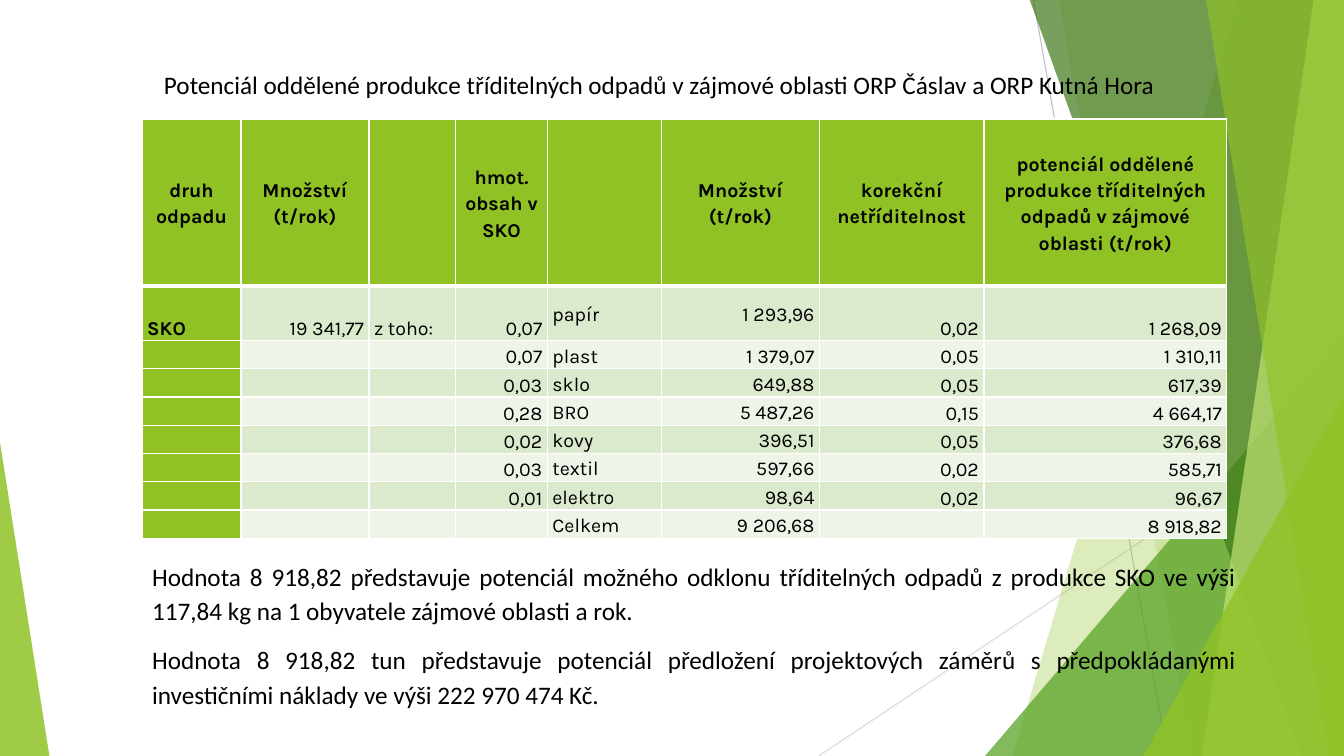
from lxml import etree
from pptx import Presentation
from pptx.dml.color import RGBColor
from pptx.enum.shapes import MSO_CONNECTOR, MSO_SHAPE
from pptx.enum.text import MSO_ANCHOR, MSO_AUTO_SIZE, PP_ALIGN
from pptx.oxml.ns import qn
from pptx.util import Pt

SCALE = 9144
LEFT, CENTER, RIGHT, JUSTIFY = PP_ALIGN.LEFT, PP_ALIGN.CENTER, PP_ALIGN.RIGHT, PP_ALIGN.JUSTIFY
MIDDLE, BOTTOM = MSO_ANCHOR.MIDDLE, MSO_ANCHOR.BOTTOM
TRIANGLE = MSO_SHAPE.ISOSCELES_TRIANGLE
STRAIGHT = MSO_CONNECTOR.STRAIGHT
GROW = MSO_AUTO_SIZE.SHAPE_TO_FIT_TEXT

WHITE = RGBColor(0xFF, 0xFF, 0xFF)
BLACK = RGBColor(0x00, 0x00, 0x00)
LIME = RGBColor(0x90, 0xC2, 0x26)
GREEN = RGBColor(0x54, 0xA0, 0x21)
DARK_GREEN = RGBColor(0x3F, 0x78, 0x19)
PALE_LIME = RGBColor(0xC0, 0xE4, 0x74)
ODD_BAND = RGBColor(0xDB, 0xE9, 0xCD)
EVEN_BAND = RGBColor(0xEE, 0xF4, 0xE8)
GREY = RGBColor(0xBF, 0xBF, 0xBF)
LIGHT_GREY = RGBColor(0xD9, 0xD9, 0xD9)

BODY_FONT = {"name": "Calibri", "size": Pt(18)}
CELL_FONT = {"name": "Karla", "size": Pt(14)}
SPACED = {"line_spacing": 1.15, "space_after": Pt(10)}
CELL_MARGINS = {"margin_left": 5 * SCALE, "margin_right": 5 * SCALE,
                "margin_top": 0, "margin_bottom": 0}

TITLE = "Potenciál oddělené produkce tříditelných odpadů v zájmové oblasti ORP Čáslav a ORP Kutná Hora"
CONCLUSIONS = [
    "Hodnota 8 918,82 představuje potenciál možného odklonu tříditelných odpadů z produkce SKO "
    "ve výši 117,84 kg na 1 obyvatele zájmové oblasti a rok.",
    "Hodnota 8 918,82 tun představuje potenciál předložení projektových záměrů s předpokládanými "
    "investičními náklady ve výši 222 970 474 Kč.",
]
COLUMN_WIDTHS = [98, 127, 86, 91, 113, 157, 163, 241]
ROW_HEIGHTS = [166, 54] + [28] * 7
COLUMN_ALIGNS = [LEFT, RIGHT, LEFT, RIGHT, LEFT, RIGHT, RIGHT, RIGHT]
COLUMN_ANCHORS = [BOTTOM] * 4 + [MIDDLE] * 2 + [BOTTOM] * 2
WASTE_ROWS = [
    ["druh odpadu", "Množství (t/rok)", "", "hmot. obsah v SKO", "", "Množství (t/rok)",
     "korekční netříditelnost",
     "potenciál oddělené produkce tříditelných odpadů v zájmové oblasti (t/rok)"],
    ["SKO", "19 341,77", "z toho:", "0,07", "papír", "1 293,96", "0,02", "1 268,09"],
    ["", "", "", "0,07", "plast", "1 379,07", "0,05", "1 310,11"],
    ["", "", "", "0,03", "sklo", "649,88", "0,05", "617,39"],
    ["", "", "", "0,28", "BRO", "5 487,26", "0,15", "4 664,17"],
    ["", "", "", "0,02", "kovy", "396,51", "0,05", "376,68"],
    ["", "", "", "0,03", "textil", "597,66", "0,02", "585,71"],
    ["", "", "", "0,01", "elektro", "98,64", "0,02", "96,67"],
    ["", "", "", "", "Celkem", "9 206,68", "", "8 918,82"],
]


def px(*lengths):
    return [round(length * SCALE) for length in lengths]


def apply(target, values):
    for key, value in values.items():
        setattr(target, key, value)


def write(paragraph, text, font, layout):
    apply(paragraph, layout)
    if text:
        run = paragraph.add_run()
        run.text = text
        apply(run.font, font)
        run.font.color.rgb = BLACK
    else:
        ending = etree.SubElement(paragraph._p, qn("a:endParaRPr"))
        ending.set("sz", str(round(font["size"].pt * 100)))


def paint(shape, color, opacity):
    shape.shadow.inherit = False
    shape.line.fill.background()
    shape.fill.solid()
    shape.fill.fore_color.rgb = color
    tint = shape._element.spPr.find(".//" + qn("a:srgbClr"))
    etree.SubElement(tint, qn("a:alpha")).set("val", str(opacity * 1000))


def add_ray(slide, start, end, color):
    ray = slide.shapes.add_connector(STRAIGHT, *px(*start, *end))
    ray.line.color.rgb = color
    ray.line.width = Pt(0.75)
    etree.SubElement(ray._element.spPr, qn("a:effectLst"))


def add_shard(slide, box, top_x, bottom_x, color, opacity):
    left, top, width, height = box
    right, bottom = left + width, top + height
    builder = slide.shapes.build_freeform(left + top_x, top, scale=SCALE)
    builder.add_line_segments([(right, top), (right, bottom), (left + bottom_x, bottom)], close=True)
    paint(builder.convert_to_shape(), color, opacity)


def add_triangle(slide, box, apex, color, opacity):
    triangle = slide.shapes.add_shape(TRIANGLE, *px(*box))
    triangle.adjustments[0] = apex
    paint(triangle, color, opacity)


def add_facets(slide, box):
    left, top, width, height = box
    right, bottom = left + width, top + height
    add_ray(slide, (left + 1025, top), (left + 1158, bottom), GREY)
    add_ray(slide, (right, top + 403), (left + 812, bottom), LIGHT_GREY)

    def shard(top_x, bottom_x, color, opacity):
        add_shard(slide, (left, top - 1, width, height + 1), top_x, bottom_x, color, opacity)

    def corner(corner_width, corner_height, color, opacity):
        corner_box = (right - corner_width, bottom - corner_height, corner_width, corner_height)
        add_triangle(slide, corner_box, 1, color, opacity)

    shard(1228, 1004, LIME, 30)
    shard(1050, 1183, LIME, 20)
    corner(356, 417, GREEN, 72)
    shard(1021, 1291, DARK_GREEN, 70)
    shard(1303, 1192, PALE_LIME, 70)
    shard(1196, 1318, LIME, 65)
    corner(199, 357, LIME, 80)
    add_triangle(slide, (left, bottom - 311, 49, 311), 0, LIME, 85)


def add_border(cell, side, points):
    border = etree.SubElement(cell._tc.get_or_add_tcPr(), qn("a:ln" + side))
    border.set("w", str(Pt(points)))
    fill = etree.SubElement(border, qn("a:solidFill"))
    etree.SubElement(fill, qn("a:srgbClr")).set("val", str(WHITE))


def add_waste_table(slide, box):
    table = slide.shapes.add_table(len(WASTE_ROWS), len(COLUMN_WIDTHS), *px(*box)).table
    apply(table, {"first_row": False, "horz_banding": False})
    for column, width in zip(table.columns, px(*COLUMN_WIDTHS)):
        column.width = width
    for row, height in zip(table.rows, px(*ROW_HEIGHTS)):
        row.height = height
    for r, texts in enumerate(WASTE_ROWS):
        header = r == 0
        for c, text in enumerate(texts):
            cell = table.cell(r, c)
            apply(cell, CELL_MARGINS)
            cell.vertical_anchor = MIDDLE if header else COLUMN_ANCHORS[c]
            for side in "LRTB":
                under_header = (r, side) in ((0, "B"), (1, "T"))
                add_border(cell, side, 3 if under_header else 1)
            cell.fill.solid()
            band = ODD_BAND if r % 2 else EVEN_BAND
            cell.fill.fore_color.rgb = LIME if header or c == 0 else band
            align = CENTER if header else COLUMN_ALIGNS[c]
            write(cell.text_frame.paragraphs[0], text,
                  {**CELL_FONT, "bold": header or c == 0}, {**SPACED, "alignment": align})


def add_text(slide, box, texts, layout):
    frame = slide.shapes.add_textbox(*px(*box)).text_frame
    apply(frame, {"word_wrap": True, "auto_size": GROW})
    for i, text in enumerate(texts):
        paragraph = frame.add_paragraph() if i else frame.paragraphs[0]
        write(paragraph, text, BODY_FONT, layout)


def main():
    deck = Presentation()
    deck.slide_width, deck.slide_height = px(1333, 750)
    slide = deck.slides.add_slide(deck.slide_layouts[6])
    add_facets(slide, (0, 0, 1333, 750))
    add_waste_table(slide, (141, 118, sum(COLUMN_WIDTHS), sum(ROW_HEIGHTS)))
    add_text(slide, (75, 64, 1158, 71), [TITLE], {"alignment": CENTER})
    add_text(slide, (141, 547, 1095, 203), CONCLUSIONS, {**SPACED, "alignment": JUSTIFY})
    deck.save("out.pptx")


if __name__ == "__main__":
    main()
